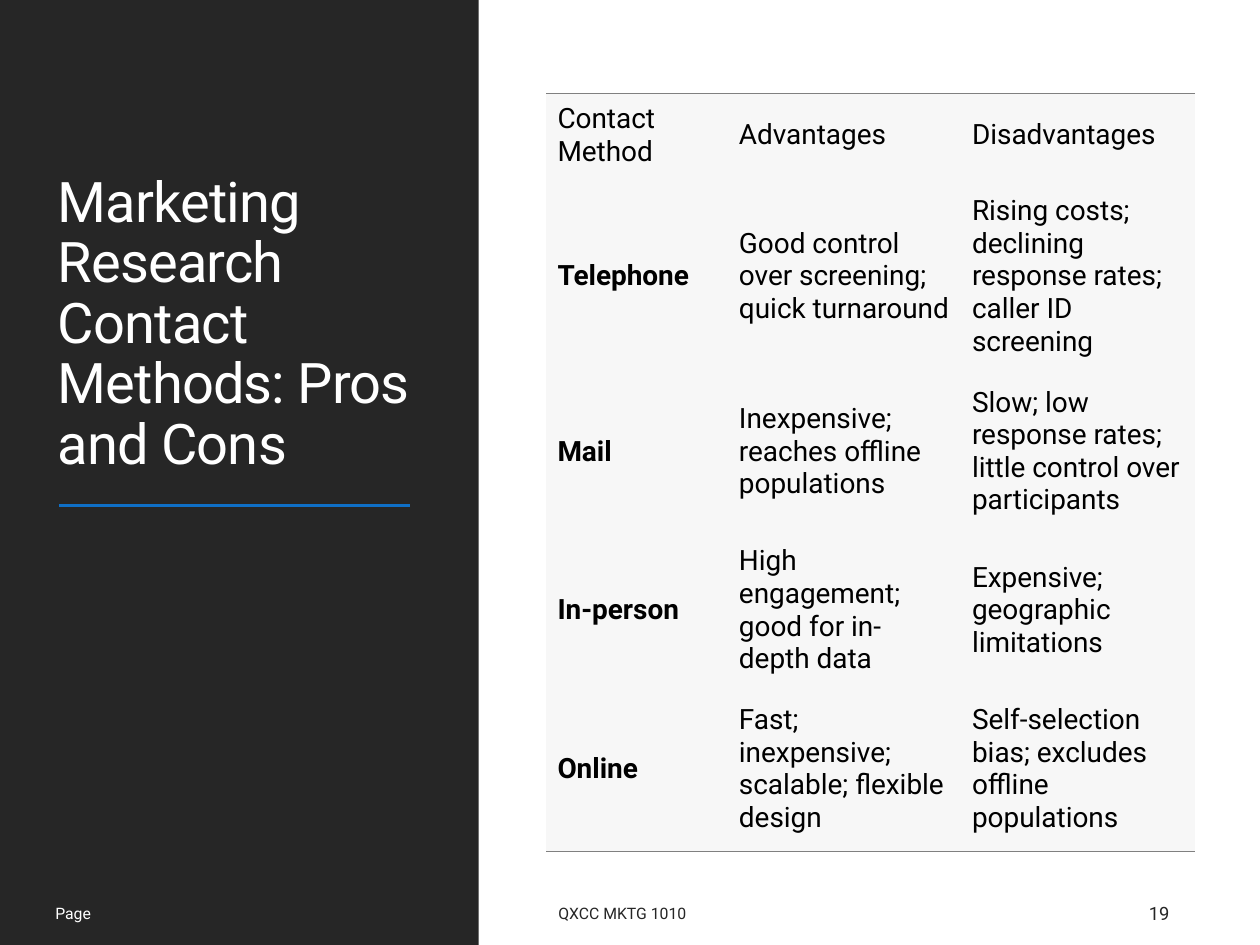
from lxml.etree import SubElement
from pptx import Presentation
from pptx.dml.color import RGBColor
from pptx.enum.shapes import MSO_CONNECTOR, MSO_SHAPE
from pptx.enum.text import MSO_ANCHOR
from pptx.oxml import parse_xml
from pptx.oxml.ns import nsdecls, qn
from pptx.util import Pt

WHITE = RGBColor(0xFF, 0xFF, 0xFF)
BLACK = RGBColor(0, 0, 0)
CHARCOAL = RGBColor(0x26, 0x26, 0x26)
BLUE = RGBColor(0x0F, 0x6F, 0xC6)
PALE_GREY = RGBColor(0xF7, 0xF7, 0xF7)
RULE_GREY = RGBColor(0x80, 0x80, 0x80)
FONT = "Roboto"
NO_TABLE_STYLE = "{2D5ABB26-0587-4C30-8999-92F81FD0307C}"

CONTACT_METHODS = [
    ("Contact Method", "Advantages", "Disadvantages"),
    ("Telephone", "Good control over screening; quick turnaround",
     "Rising costs; declining response rates; caller ID screening"),
    ("Mail", "Inexpensive; reaches offline populations",
     "Slow; low response rates; little control over participants"),
    ("In-person", "High engagement; good for in-depth data",
     "Expensive; geographic limitations"),
    ("Online", "Fast; inexpensive; scalable; flexible design",
     "Self-selection bias; excludes offline populations"),
]
COLUMN_WIDTHS = [103.7, 133.2, 133.9]
ROW_HEIGHTS = [51.8, 109.4, 90.7, 90.7, 90.7]


def set_attributes(target, values):
    for name, value in values.items():
        setattr(target, name, value)


def write(frame, text, size, color, bold=False):
    """Fill a text frame with one run and return its paragraph and run."""
    paragraph = frame.paragraphs[0]
    run = paragraph.add_run()
    run.text = text
    set_attributes(run.font, {"name": FONT, "size": Pt(size), "bold": bold})
    run.font.color.rgb = color
    return paragraph, run


def add_label(slide, box, text, size, color, anchor=MSO_ANCHOR.MIDDLE):
    frame = slide.shapes.add_textbox(*map(Pt, box)).text_frame
    set_attributes(frame, {"word_wrap": True, "vertical_anchor": anchor})
    return write(frame, text, size, color)


def add_title_panel(slide, left, top, width, height):
    # Dark panel
    panel = slide.shapes.add_shape(
        MSO_SHAPE.RECTANGLE, Pt(left), Pt(top), Pt(width), Pt(height))
    panel.shadow.inherit = False
    panel.fill.solid()
    panel.fill.fore_color.rgb = CHARCOAL
    panel.line.fill.background()

    # Title
    paragraph, run = add_label(
        slide, (left + 26, top + 50.4, 216, 225.4),
        "Marketing Research Contact Methods: Pros and Cons",
        32, WHITE, MSO_ANCHOR.BOTTOM)
    paragraph.line_spacing = 0.9
    run.font._element.set("spc", "-50")

    # Rule under the title
    rule_y = Pt(top + 288.7)
    rule = slide.shapes.add_connector(
        MSO_CONNECTOR.STRAIGHT, Pt(left + 33.8), rule_y, Pt(left + 234), rule_y)
    rule.line.color.rgb = BLUE
    rule.line.width = Pt(1.5)
    SubElement(rule._element.spPr, qn("a:effectLst"))


def add_border(cell, side):
    border = parse_xml(
        f'<a:{side} {nsdecls("a")} w="{Pt(1)}"><a:solidFill>'
        f'<a:srgbClr val="{RULE_GREY}"/></a:solidFill></a:{side}>')
    cell._tc.get_or_add_tcPr().insert(0, border)


def add_methods_table(slide, left, top, width, height):
    last_row = len(CONTACT_METHODS) - 1
    table = slide.shapes.add_table(
        len(CONTACT_METHODS), len(COLUMN_WIDTHS),
        Pt(left), Pt(top), Pt(width), Pt(height)).table
    set_attributes(table, {"first_row": False, "horz_banding": False})
    table._tbl.tblPr.find(qn("a:tableStyleId")).text = NO_TABLE_STYLE

    for column, column_width in zip(table.columns, COLUMN_WIDTHS):
        column.width = Pt(column_width)
    for row, row_height in zip(table.rows, ROW_HEIGHTS):
        row.height = Pt(row_height)

    cell_format = {
        "vertical_anchor": MSO_ANCHOR.MIDDLE,
        "margin_left": Pt(6.6), "margin_right": Pt(6.6),
        "margin_top": Pt(3.3), "margin_bottom": Pt(7),
    }
    for r, method in enumerate(CONTACT_METHODS):
        for c, text in enumerate(method):
            cell = table.cell(r, c)
            set_attributes(cell, cell_format)
            cell.fill.solid()
            cell.fill.fore_color.rgb = PALE_GREY
            write(cell.text_frame, text, 16, BLACK, bold=r > 0 and c == 0)
            if r == 0:
                add_border(cell, "lnT")
            if r == last_row:
                add_border(cell, "lnB")


def add_footer(slide, top, height):
    for left, width, text, size, color in [
        (24.5, 217.4, "Page", 9, WHITE),
        (312, 319.7, "QXCC MKTG 1010", 9, CHARCOAL),
        (649.4, 46, "19", 10.5, CHARCOAL),
    ]:
        paragraph, _ = add_label(
            slide, (left, top, width, height), text, size, color)
        paragraph.space_after = Pt(6)


def main():
    deck = Presentation()
    set_attributes(deck, {"slide_width": Pt(720), "slide_height": Pt(540)})
    slide = deck.slides.add_slide(deck.slide_layouts[6])
    add_title_panel(slide, 0, 0, 273.6, 540)
    add_footer(slide, 507.6, 28.8)
    add_methods_table(slide, 312, 53.3, sum(COLUMN_WIDTHS), sum(ROW_HEIGHTS))
    deck.save("out.pptx")


if __name__ == "__main__":
    main()
